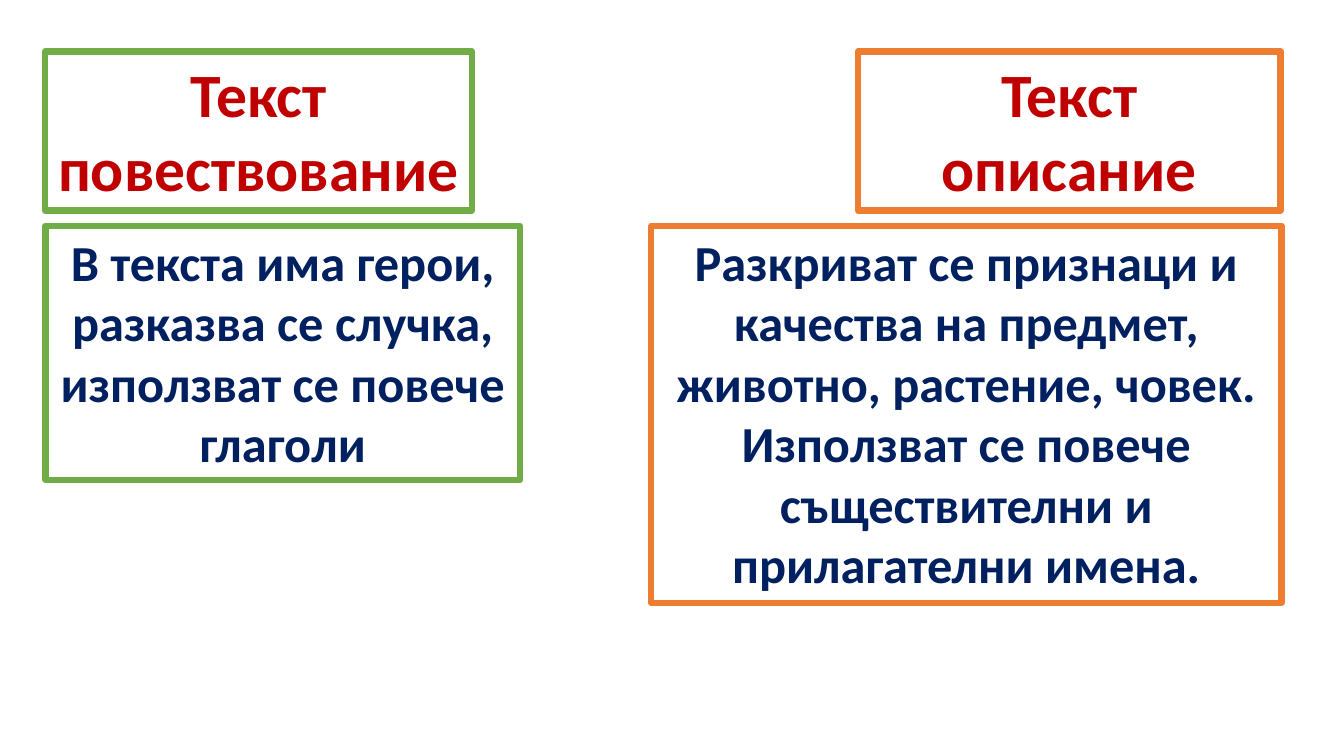
from pptx import Presentation
from pptx.dml.color import RGBColor
from pptx.enum.shapes import MSO_SHAPE
from pptx.enum.text import MSO_ANCHOR, MSO_AUTO_SIZE, PP_ALIGN
from pptx.util import Inches, Pt

RECTANGLE = MSO_SHAPE.RECTANGLE
TOP = MSO_ANCHOR.TOP
GROW = MSO_AUTO_SIZE.SHAPE_TO_FIT_TEXT
CENTER = PP_ALIGN.CENTER

GREEN, ORANGE = "70AD47", "ED7D31"
RED, NAVY, WHITE = "C00000", "002060", "FFFFFF"
TITLE_TOP, TITLE_HEIGHT = 0.51, 1.58
DETAIL_TOP = 2.24


def color(value):
    """Turn a hex string into a colour."""
    return RGBColor.from_string(value)


def add_box(page, left, top, width, height, border, lines, size, ink):
    """Add a framed white box with bold centred paragraphs."""
    box = page.shapes.add_shape(
        RECTANGLE, Inches(left), Inches(top), Inches(width), Inches(height))
    box.shadow.inherit = False
    box.fill.solid()
    box.fill.fore_color.rgb = color(WHITE)
    box.line.color.rgb = color(border)
    box.line.width = Pt(4.5)
    frame = box.text_frame
    frame.word_wrap = True
    frame.auto_size = GROW
    frame.vertical_anchor = TOP
    for index, line in enumerate(lines):
        para = frame.add_paragraph() if index else frame.paragraphs[0]
        para.alignment = CENTER
        span = para.add_run()
        span.text = line
        span.font.name = "Calibri"
        span.font.size = Pt(size)
        span.font.bold = True
        span.font.color.rgb = color(ink)


def add_title(page, left, width, border, text):
    """Add the box that names a type of text."""
    add_box(page, left, TITLE_TOP, width, TITLE_HEIGHT, border, [text], 44, RED)


def add_detail(page, left, width, height, border, lines):
    """Add the box that explains a type of text."""
    add_box(page, left, DETAIL_TOP, width, height, border, lines, 36, NAVY)


def main():
    """Build the slide that compares two types of text."""
    deck = Presentation()
    deck.slide_width, deck.slide_height = Inches(13.33), Inches(7.5)
    page = deck.slides.add_slide(deck.slide_layouts[6])

    add_title(page, 0.45, 4.23, GREEN, "Текст повествование")
    add_detail(page, 0.45, 4.71, 2.52, GREEN, [
        "В текста има герои,",
        "разказва се случка,",
        "използват се повече глаголи",
    ])
    add_title(page, 8.51, 4.19, ORANGE, "Текст описание")
    add_detail(page, 6.46, 6.25, 3.74, ORANGE, [
        "Разкриват се признаци и качества на предмет, животно, растение, човек.",
        "Използват се повече съществителни и прилагателни имена.",
    ])
    deck.save("out.pptx")


if __name__ == "__main__":
    main()
